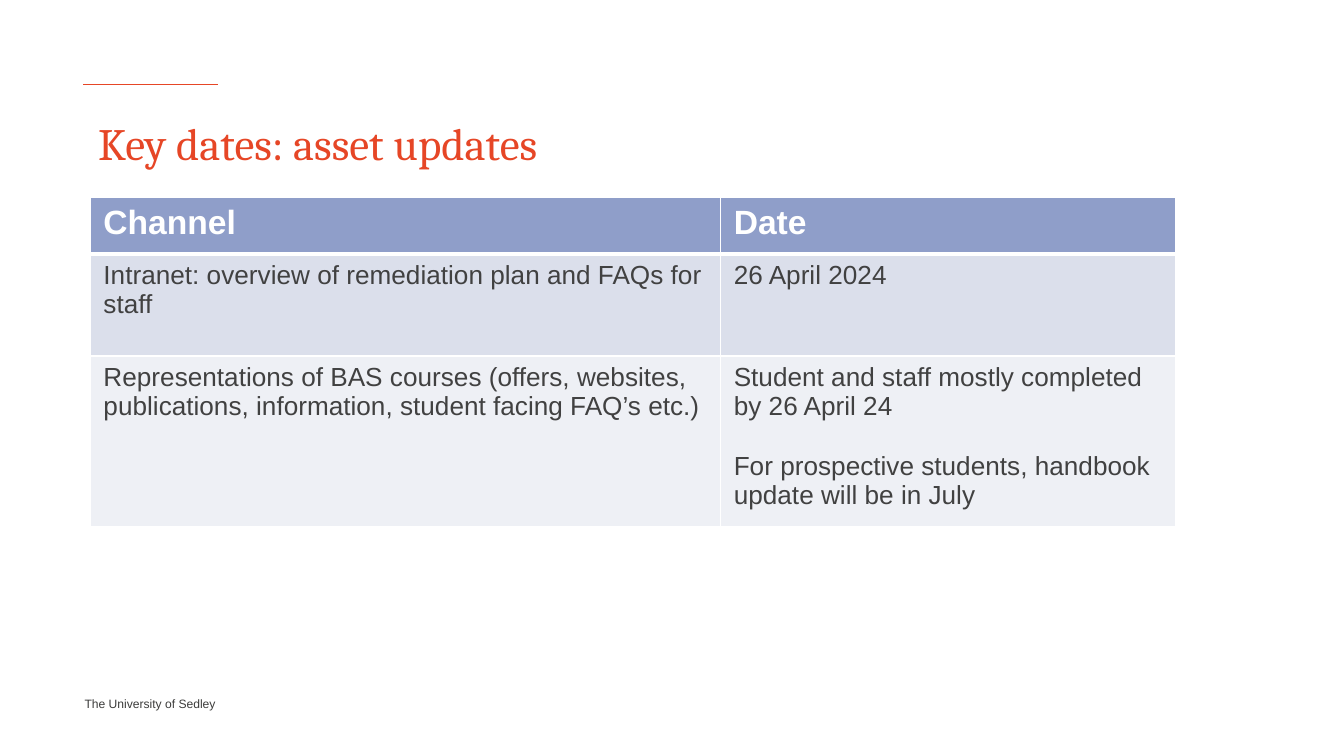
import pptx
import pptx.util
import pptx.dml.color
import pptx.enum.shapes
import pptx.enum.text
import pptx.oxml
import pptx.oxml.ns

Inches = pptx.util.Inches
Pt = pptx.util.Pt


def paint(part, color):
    """Set a fill or line fill to a solid hex colour."""
    part.solid()
    part.fore_color.rgb = pptx.dml.color.RGBColor.from_string(color)


def write(para, text, size, color, font="Arial", bold=False):
    run = para.add_run()
    run.text = text
    run.font.name = font
    run.font.size = Pt(size)
    run.font.bold = bold
    paint(run.font.fill, color)


deck = pptx.Presentation()
deck.slide_width = Inches(10)
deck.slide_height = Inches(10) * 9 // 16
slide = deck.slides.add_slide(deck.slide_layouts[5])
shapes = slide.shapes

# Footer
foot = shapes.add_textbox(Inches(0.63), Inches(5.18), Inches(1.03), Inches(0.13))
frame = foot.text_frame
frame.margin_left = frame.margin_right = frame.margin_top = frame.margin_bottom = 0
frame.word_wrap = True
para = frame.paragraphs[0]
para.space_before = Pt(0.3)
for word in ("The ", "University ", "of ", "Sedley"):
    write(para, word, 6.5, "3C3C3B")

# Accent rule
rule = shapes.add_connector(
    pptx.enum.shapes.MSO_CONNECTOR.STRAIGHT,
    Inches(1.62), Inches(0.63), Inches(0.62), Inches(0.63))
paint(rule.line.fill, "E64626")
rule.line.width = Pt(0.75)
rule._element.spPr.append(pptx.oxml.parse_xml(
    "<a:effectLst %s/>" % pptx.oxml.ns.nsdecls("a")))

# Title
title = shapes.title
title.left, title.top = Inches(0.63), Inches(0.81)
title.width, title.height = Inches(9.28), Inches(0.4)
frame = title.text_frame
frame.auto_size = pptx.enum.text.MSO_AUTO_SIZE.NONE
frame.vertical_anchor = pptx.enum.text.MSO_ANCHOR.TOP
para = frame.paragraphs[0]
para.alignment = pptx.enum.text.PP_ALIGN.LEFT
write(para, "Key dates: asset updates", 24, "E64626", "Cambria")

# Table: each cell is a list of paragraphs
rows = [
    (["Channel"], ["Date"]),
    (["Intranet: overview of remediation plan and FAQs for staff"],
     ["26 April 2024"]),
    (["Representations of BAS courses (offers, websites, publications, "
      "information, student facing FAQ’s etc.)  "],
     ["Student and staff mostly completed by 26 April 24",
      "For prospective students, handbook update will be in July"]),
]
fills = ["8F9EC9", "DBDFEB", "EEF0F5"]
table = shapes.add_table(
    3, 2, Inches(0.67), Inches(1.47), Inches(8.08), Inches(2.45)).table
for col, width in zip(table.columns, (4.69, 3.39)):
    col.width = Inches(width)
for row, height in zip(table.rows, (0.42, 0.76, 1.27)):
    row.height = Inches(height)

for r, row in enumerate(rows):
    head = r == 0
    for c, texts in enumerate(row):
        cell = table.cell(r, c)
        frame = cell.text_frame
        for i, text in enumerate(texts):
            para = frame.add_paragraph() if i else frame.paragraphs[0]
            if i:
                para.space_before = Pt(16)
            write(para, text, 18 if head else 14,
                  "FFFFFF" if head else "414141", bold=head)
        paint(cell.fill, fills[r])
        # Borders come before the fill in the cell properties
        props = cell._tc.get_or_add_tcPr()
        for n, side in enumerate("LRTB"):
            thick = (head and side == "B") or (r == 1 and side == "T")
            props.insert(n, pptx.oxml.parse_xml(
                '<a:ln%s w="%d" %s><a:solidFill><a:srgbClr val="FFFFFF"/>'
                "</a:solidFill></a:ln%s>"
                % (side, Pt(3 if thick else 1), pptx.oxml.ns.nsdecls("a"), side)))

deck.save("out.pptx")
